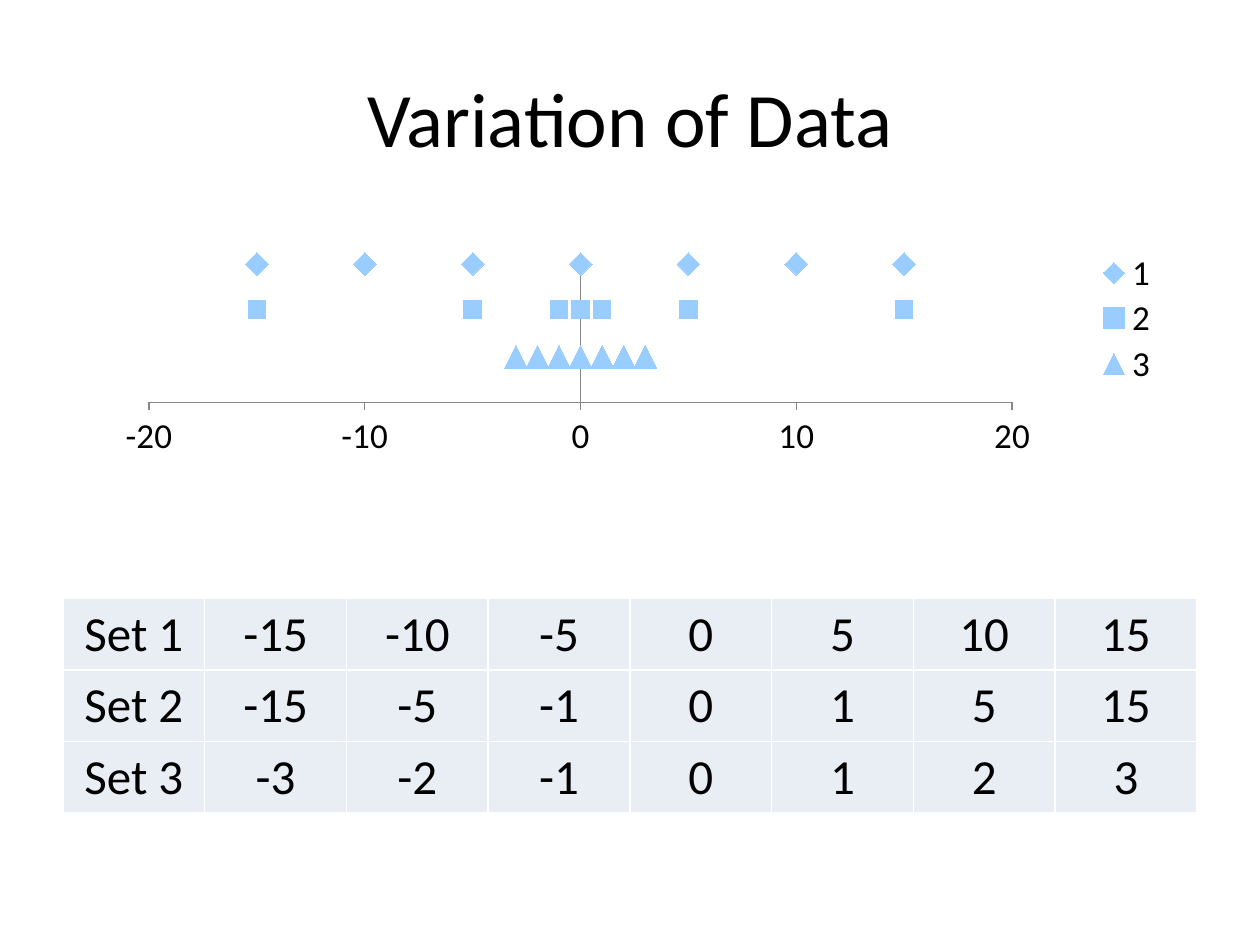
import pptx
import pptx.chart.data
import pptx.dml.color
import pptx.enum.chart
import pptx.enum.text
import pptx.oxml
import pptx.oxml.ns
import pptx.util
from pptx.util import Inches

SETS = [
    [-15, -10, -5, 0, 5, 10, 15],
    [-15, -5, -1, 0, 1, 5, 15],
    [-3, -2, -1, 0, 1, 2, 3],
]
LEVELS = [100, 67, 33]
MARKERS = [("DIAMOND", 13), ("SQUARE", 10), ("TRIANGLE", 13)]


def color(value):
    return pptx.dml.color.RGBColor.from_string(value)


def apply(target, values):
    for name, value in values.items():
        setattr(target, name, value)


def style_font(font, size):
    apply(font, {"name": "Calibri", "size": pptx.util.Pt(size), "bold": False})
    font.color.rgb = color("000000")


def write(frame, text, size):
    para = frame.paragraphs[0]
    para.alignment = pptx.enum.text.PP_ALIGN.CENTER
    span = para.add_run()
    span.text = text
    style_font(span.font, size)


def add_title(page, box):
    frame = page.shapes.add_textbox(*box).text_frame
    apply(frame, {"word_wrap": True,
                  "vertical_anchor": pptx.enum.text.MSO_ANCHOR.MIDDLE})
    write(frame, "Variation of Data", 44)


def set_layout(element, index, bounds, inner=False):
    for old in element.findall(pptx.oxml.ns.qn("c:layout")):
        element.remove(old)
    target = '<c:layoutTarget val="inner"/>' if inner else ""
    modes = "".join(f'<c:{side}Mode val="edge"/>' for side in "xy")
    sizes = "".join(f'<c:{side} val="{value}"/>'
                    for side, value in zip("xywh", bounds))
    element.insert(index, pptx.oxml.parse_xml(
        f'<c:layout {pptx.oxml.ns.nsdecls("c")}><c:manualLayout>'
        f'{target}{modes}{sizes}</c:manualLayout></c:layout>'))


def style_axes(chart):
    tick = pptx.enum.chart.XL_TICK_MARK
    label = pptx.enum.chart.XL_TICK_LABEL_POSITION
    formats = [
        (chart.category_axis, {
            "minimum_scale": -20, "maximum_scale": 20, "major_unit": 10,
            "major_tick_mark": tick.OUTSIDE,
            "tick_label_position": label.NEXT_TO_AXIS}),
        (chart.value_axis, {
            "minimum_scale": 0, "maximum_scale": 100, "major_unit": 33,
            "major_tick_mark": tick.NONE,
            "tick_label_position": label.NONE}),
    ]
    for axis, values in formats:
        apply(axis, {**values, "has_major_gridlines": False,
                     "minor_tick_mark": tick.NONE})
        axis.format.line.color.rgb = color("868686")
        axis.format.line.width = pptx.util.Pt(0.75)
    style_font(chart.category_axis.tick_labels.font, 20)


def add_scatter(page, box):
    data = pptx.chart.data.XyChartData()
    for number, (values, level) in enumerate(zip(SETS, LEVELS), 1):
        series = data.add_series(str(number))
        for value in values:
            series.add_data_point(value, level)
    chart = page.shapes.add_chart(
        pptx.enum.chart.XL_CHART_TYPE.XY_SCATTER, *box, data).chart
    apply(chart, {"has_title": False, "has_legend": True})
    style_font(chart.font, 10)
    style_axes(chart)
    chart.plots[0].vary_by_categories = False
    for series, (style, size) in zip(chart.plots[0].series, MARKERS):
        series.smooth = False
        series.format.line.fill.background()
        apply(series.marker, {
            "style": getattr(pptx.enum.chart.XL_MARKER_STYLE, style),
            "size": size})
        series.marker.format.fill.solid()
        series.marker.format.fill.fore_color.rgb = color("99CCFF")
        series.marker.format.line.fill.background()
    legend = chart.legend
    apply(legend, {"position": pptx.enum.chart.XL_LEGEND_POSITION.RIGHT,
                   "include_in_layout": False})
    style_font(legend.font, 20)
    root = chart.element
    set_layout(root.find(".//" + pptx.oxml.ns.qn("c:plotArea")), 0,
               (0.05, 0.09, 0.79, 0.56), inner=True)
    set_layout(root.find(".//" + pptx.oxml.ns.qn("c:legend")), 1,
               (0.91, 0.03, 0.07, 0.56))


def style_cell(cell):
    cell.fill.solid()
    cell.fill.fore_color.rgb = color("E9EDF4")
    properties = cell._tc.get_or_add_tcPr()
    for index, side in enumerate("LRTB"):
        properties.insert(index, pptx.oxml.parse_xml(
            f'<a:ln{side} {pptx.oxml.ns.nsdecls("a")} w="12700"><a:solidFill>'
            f'<a:srgbClr val="FFFFFF"/></a:solidFill></a:ln{side}>'))


def add_sets(page, box):
    table = page.shapes.add_table(len(SETS), len(SETS[0]) + 1, *box).table
    apply(table, {"first_row": False, "horz_banding": False})
    for row, values in enumerate(SETS):
        for column, value in enumerate([f"Set {row + 1}", *values]):
            cell = table.cell(row, column)
            style_cell(cell)
            write(cell.text_frame, str(value), 28)


def main():
    deck = pptx.Presentation()
    apply(deck, {"slide_width": Inches(10), "slide_height": Inches(7.5)})
    page = deck.slides.add_slide(deck.slide_layouts[6])
    add_title(page, [Inches(n) for n in (0.5, 0.3, 9, 1.25)])
    add_scatter(page, [Inches(n) for n in (0.75, 1.92, 8.67, 1.96)])
    add_sets(page, [Inches(n) for n in (0.5, 4.75, 9, 1.7)])
    deck.save("out.pptx")


if __name__ == "__main__":
    main()
